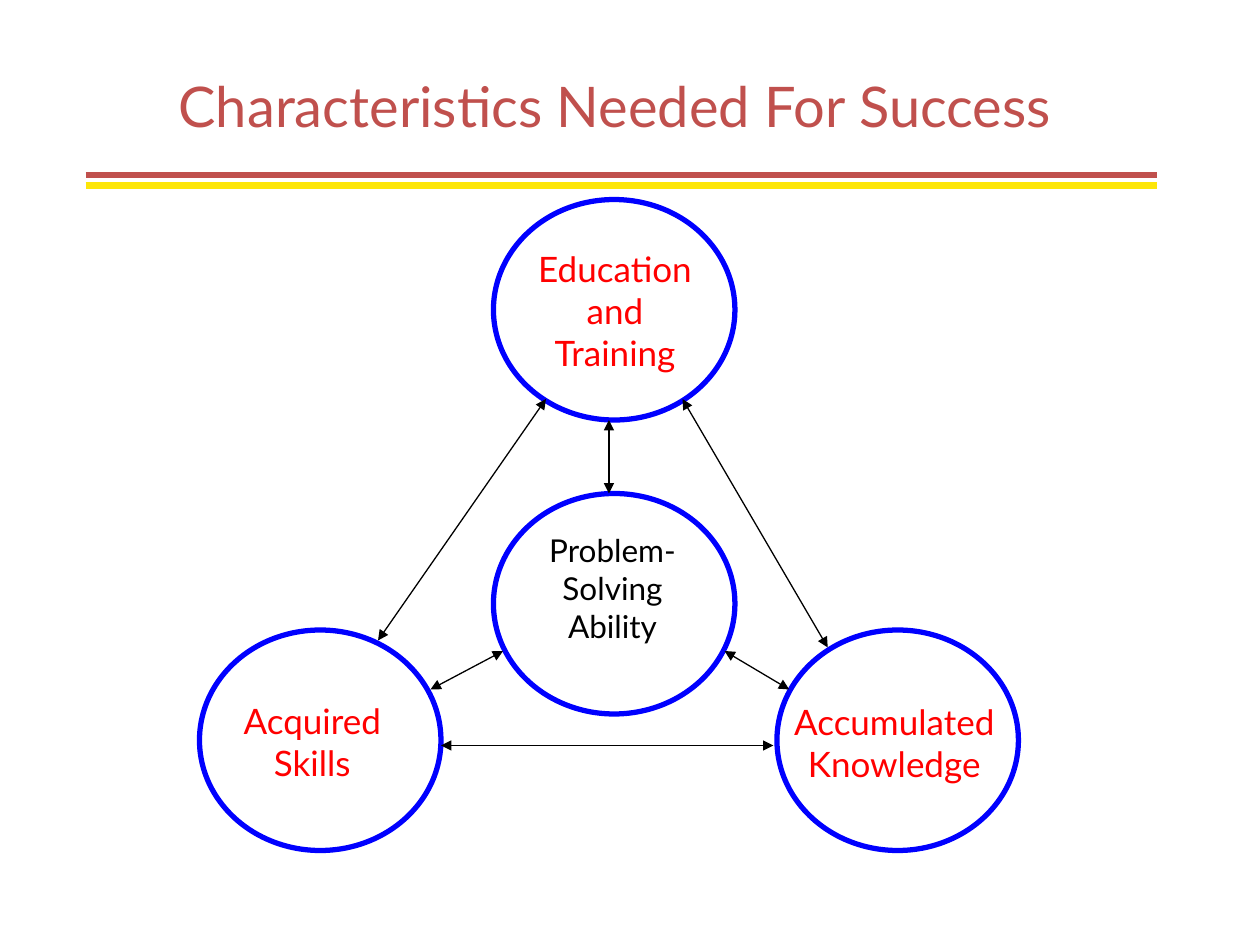
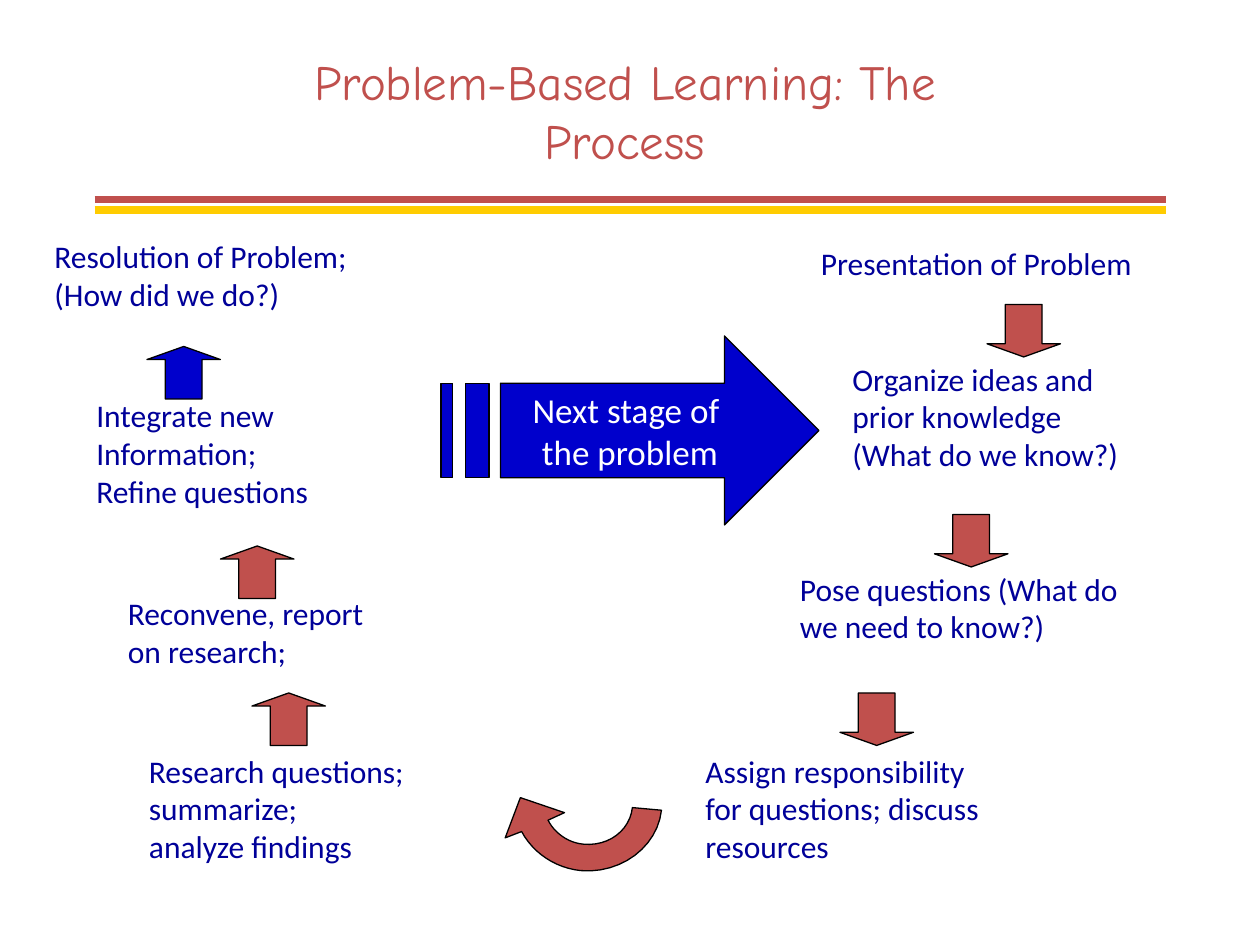
from lxml.etree import SubElement
from pptx import Presentation
from pptx.dml.color import RGBColor
from pptx.enum.shapes import MSO_CONNECTOR, MSO_SHAPE
from pptx.enum.text import MSO_ANCHOR, MSO_AUTO_SIZE, PP_ALIGN
from pptx.oxml.ns import qn
from pptx.util import Pt

THEME = {
    "brick": "C0504D", "lemon": "FDE609", "gold": "FFCC00",
    "ring": "0000FF", "blue": "0000CC", "black": "000000",
    "head": {"name": "Lato", "size": Pt(32), "color": "C0504D"},
    "comic": {"name": "Comic Neue", "size": Pt(28), "color": "C0504D"},
    "trait": {"name": "Lato", "size": Pt(20), "color": "FF0000"},
    "core": {"name": "Lato", "size": Pt(18), "color": "000000"},
    "step": {"name": "Calibri", "size": Pt(18), "color": "000099"},
    "stage": {"name": "Calibri", "size": Pt(20), "color": "FFFFFF"},
}


def paint(shape, fill, line, width):
    """Set fill (None for hollow) and outline, without shadow."""
    shape.shadow.inherit = False
    if fill:
        shape.fill.solid()
        shape.fill.fore_color.rgb = RGBColor.from_string(THEME[fill])
    else:
        shape.fill.background()
    shape.line.color.rgb = RGBColor.from_string(THEME[line])
    shape.line.width = Pt(width)


def draw(slide, ends, color, width, heads=False):
    """Draw a straight line, with arrowheads at both ends if asked."""
    line = slide.shapes.add_connector(MSO_CONNECTOR.STRAIGHT, *map(Pt, ends))
    line.line.color.rgb = RGBColor.from_string(THEME[color])
    line.line.width = Pt(width)
    props = line.element.spPr
    if heads:
        for tag in ("a:headEnd", "a:tailEnd"):
            SubElement(props.get_or_add_ln(), qn(tag), type="triangle")
    SubElement(props, qn("a:effectLst"))


deck = Presentation()
deck.slide_width, deck.slide_height = Pt(720), Pt(540)
texts = []  # frame, words, format, alignment

# Titles, each over a double rule
heads = [
    ("Characteristics Needed For Success", "head", (49, 37.5, 605, 45.5),
     49, 100, "lemon", 3),
    ("Problem-Based Learning: The Process", "comic", (162, 30, 390, 66),
     54, 114, "gold", 4.5),
]
slides = []
for words, kind, box, left, top, under, width in heads:
    slide = deck.slides.add_slide(deck.slide_layouts[5])
    title = slide.shapes.title
    title.left, title.top, title.width, title.height = map(Pt, box)
    title.text_frame.vertical_anchor = MSO_ANCHOR.MIDDLE
    texts.append((title.text_frame, words, kind, PP_ALIGN.CENTER))
    draw(slide, (left, top + 6, left + 612, top + 6), under, 4.5)
    draw(slide, (left, top, left + 612, top), "brick", width)
    slides.append(slide)
traits, process = slides

# Four rings and the arrows between them
for left, top in [(282, 114), (282, 282), (114, 360), (444, 360)]:
    ring = traits.shapes.add_shape(
        MSO_SHAPE.OVAL, Pt(left), Pt(top), Pt(138), Pt(126))
    paint(ring, None, "ring", 3)

links = [
    (246, 394, 287.5, 372), (348, 282, 348, 240), (451, 394, 414, 372),
    (216, 366, 312, 228), (390, 228, 473, 370), (252, 426, 442, 426),
]
for ends in links:
    draw(traits, ends, "black", 0.75, heads=True)

# Block arrows between the steps
UP, DOWN = MSO_SHAPE.UP_ARROW, MSO_SHAPE.DOWN_ARROW
blocks = [
    (UP, 84, 198, "blue"), (UP, 126, 312, "brick"), (UP, 144, 396, "brick"),
    (DOWN, 564, 174, "brick"), (DOWN, 534, 294, "brick"),
    (DOWN, 480, 396, "brick"),
]
for kind, left, top, fill in blocks:
    block = process.shapes.add_shape(kind, Pt(left), Pt(top), Pt(42), Pt(30))
    block.adjustments[0], block.adjustments[1] = 0.5, 0.25
    paint(block, fill, "black", 0.75)

# Striped arrow: the head with its shaft, then two bars
pen = process.shapes.build_freeform(Pt(414), Pt(192), scale=1.0)
shaft = [(414, 219), (286, 219), (286, 273), (414, 273), (414, 300), (468, 246)]
pen.add_line_segments([(Pt(x), Pt(y)) for x, y in shaft])
for left, right in [(266, 279.5), (252, 258.75)]:
    pen.move_to(Pt(left), Pt(219))
    bar = [(left, 273), (right, 273), (right, 219)]
    pen.add_line_segments([(Pt(x), Pt(y)) for x, y in bar])
stage = pen.convert_to_shape()
paint(stage, "blue", "black", 0.75)
stage.text_frame.vertical_anchor = MSO_ANCHOR.MIDDLE
texts.append((stage.text_frame, "Next stage of \nthe problem", "stage",
              PP_ALIGN.CENTER))

# Curved arrow: one point is a straight side, three points are a Bezier curve
sides = [
    [(316.8, 475.9), (324.7, 481.7), (333.4, 482.4)],
    [(347.8, 483.8), (360, 474.5), (361.4, 461.5)],
    [(378, 463)],
    [(375.8, 483.8), (355, 499.5), (331.9, 497.5)],
    [(317.5, 496.1), (304.6, 487.4), (298.1, 475.2)],
    [(288.7, 478.8)], [(297.4, 455.8)], [(322.6, 464.4)],
]
trace = [(313.2, 468.7)]
for side in sides:
    if len(side) == 1:
        trace += side
        continue
    curve = [trace[-1], *side]
    for step in range(1, 13):
        t = step / 12
        parts = ((1 - t) ** 3, 3 * t * (1 - t) ** 2, 3 * t * t * (1 - t), t ** 3)
        trace.append(tuple(sum(p * spot[axis] for p, spot in zip(parts, curve))
                           for axis in (0, 1)))
pen = process.shapes.build_freeform(*map(Pt, trace[0]), scale=1.0)
pen.add_line_segments([(Pt(x), Pt(y)) for x, y in trace[1:]])
paint(pen.convert_to_shape(), "brick", "black", 0.75)

# Labels
MID, LEFT = PP_ALIGN.CENTER, PP_ALIGN.LEFT
labels = [
    (traits, "Education\nand\nTraining", "trait", MID, (282, 138, 139, 79)),
    (traits, "Problem-\nSolving\nAbility", "core", MID, (294, 300, 112, 94)),
    (traits, "Acquired\nSkills", "trait", MID, (126, 396, 105, 55)),
    (traits, "Accumulated\nKnowledge", "trait", MID, (438, 396.5, 146, 55)),
    (process, "Presentation of Problem", "step", LEFT, (462, 136, 246, 36)),
    (process, "Organize ideas and\nprior knowledge\n(What do we know?)",
     "step", LEFT, (480, 202, 217, 94)),
    (process, "Pose questions (What do\nwe need to know?)",
     "step", LEFT, (450, 322, 253, 65)),
    (process, "Assign responsibility\nfor questions; discuss\nresources",
     "step", LEFT, (396, 426, 227, 94)),
    (process, "Research questions;\nsummarize;\nanalyze findings",
     "step", LEFT, (78, 426, 212, 94)),
    (process, "Reconvene, report\non research;", "step", LEFT,
     (66, 336, 197, 65)),
    (process, "Integrate new\nInformation;\nRefine questions",
     "step", LEFT, (48, 223, 175, 94)),
    (process, "Resolution of Problem;\n(How did we do?)",
     "step", LEFT, (24, 132, 238, 65)),
]
for slide, words, kind, align, box in labels:
    label = slide.shapes.add_textbox(*map(Pt, box))
    texts.append((label.text_frame, words, kind, align))

# Words and type for every frame
for frame, words, kind, align in texts:
    frame.text = words
    frame.word_wrap = True
    frame.auto_size = MSO_AUTO_SIZE.NONE
    for para in frame.paragraphs:
        para.alignment = align
        for run in para.runs:
            for key, value in THEME[kind].items():
                if key == "color":
                    run.font.color.rgb = RGBColor.from_string(value)
                else:
                    setattr(run.font, key, value)

deck.save("out.pptx")
